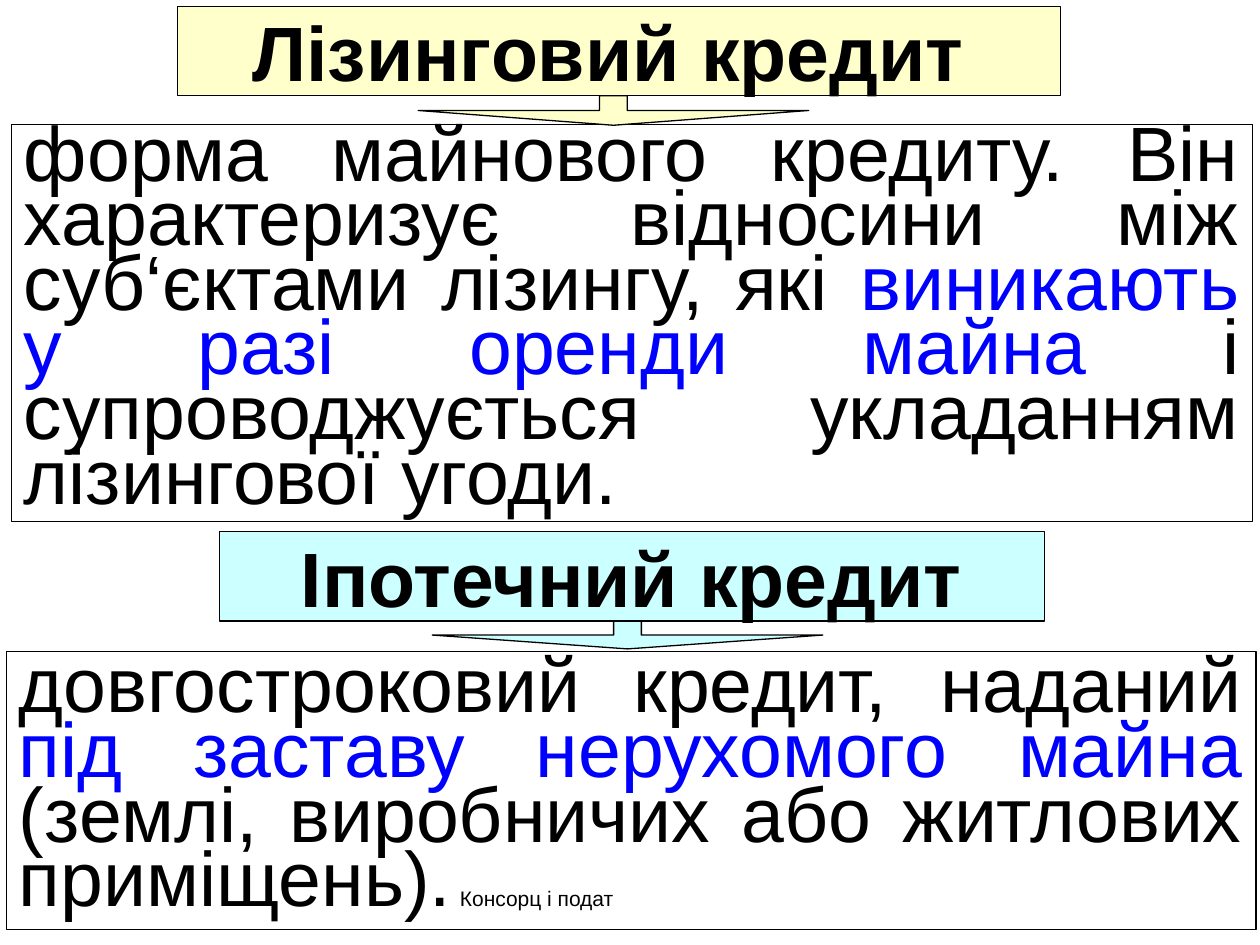
from lxml.etree import SubElement
from pptx import Presentation
from pptx.dml.color import RGBColor
from pptx.enum.shapes import MSO_SHAPE
from pptx.enum.text import MSO_ANCHOR, MSO_AUTO_SIZE, PP_ALIGN
from pptx.oxml.ns import qn
from pptx.util import Pt

BLACK = RGBColor(0x00, 0x00, 0x00)
BLUE = RGBColor(0x00, 0x00, 0xFF)
WHITE = RGBColor(0xFF, 0xFF, 0xFF)
CREAM = RGBColor(0xFF, 0xFF, 0xCC)
AQUA = RGBColor(0xCC, 0xFF, 0xFF)

LEASING_TEXT = [
    ("форма майнового кредиту. Він характеризує відносини між суб‘єктами лізингу, які ", BLACK, 44),
    ("виникають у разі оренди майна", BLUE, 44),
    (" і супроводжується укладанням лізингової угоди.", BLACK, 44),
]
MORTGAGE_TEXT = [
    ("довгостроковий кредит, наданий ", BLACK, 44),
    ("під заставу нерухомого майна", BLUE, 44),
    (" (землі, виробничих або житлових приміщень).", BLACK, 44),
    ("\tКонсорц і подат", BLACK, 12),
]


def place(shape, box, fill):
    """Move a shape to its box and give it a fill and a thin black outline."""
    shape.left, shape.top, shape.width, shape.height = map(Pt, box)
    shape.fill.solid()
    shape.fill.fore_color.rgb = fill
    shape.line.color.rgb = BLACK
    shape.line.width = Pt(0.75)


def write(shape, parts, alignment, spacing, bold=False):
    """Write coloured runs into one unbulleted paragraph and return its properties."""
    frame = shape.text_frame
    frame.auto_size = MSO_AUTO_SIZE.NONE
    frame.word_wrap = True
    frame.vertical_anchor = MSO_ANCHOR.MIDDLE
    frame.margin_left = frame.margin_right = Pt(7.2)
    frame.margin_top = frame.margin_bottom = Pt(3.6)
    paragraph = frame.paragraphs[0]
    paragraph.alignment = alignment
    paragraph.line_spacing = spacing
    paragraph.space_before = paragraph.space_after = Pt(0)
    for text, color, size in parts:
        run = paragraph.add_run()
        run.text = text
        run.font.name = "Arial"
        run.font.size = Pt(size)
        run.font.bold = bold
        run.font.color.rgb = color
    properties = paragraph._p.get_or_add_pPr()
    properties.set("marL", "0")
    properties.set("indent", "0")
    SubElement(properties, qn("a:buNone"))
    return properties


def add_heading(shape, box, text, fill):
    """Fill a heading placeholder with a centred bold term."""
    place(shape, box, fill)
    write(shape, [(text, BLACK, 44)], PP_ALIGN.CENTER, 1.0, bold=True)


def add_definition(shape, box, parts):
    """Fill a body placeholder with a justified definition and a right tab stop."""
    place(shape, box, WHITE)
    properties = write(shape, parts, PP_ALIGN.JUSTIFY, 0.7)
    if parts[-1][0].startswith("\t"):
        tabs = SubElement(properties, qn("a:tabLst"))
        SubElement(tabs, qn("a:tab"), pos=str(Pt(689)), algn="r")


def add_arrow(slide, box, fill):
    """Add the flat arrow leading from a heading to its definition."""
    arrow = slide.shapes.add_shape(MSO_SHAPE.DOWN_ARROW, *map(Pt, box))
    place(arrow, box, fill)
    arrow.shadow.inherit = False
    arrow.adjustments[0] = 0.071
    arrow.adjustments[1] = 0.5


def main():
    """Build the slide on two kinds of credit."""
    presentation = Presentation()
    presentation.slide_width, presentation.slide_height = Pt(720), Pt(540)
    slide = presentation.slides.add_slide(presentation.slide_layouts[4])
    holders = {holder.placeholder_format.idx: holder for holder in slide.placeholders}

    add_heading(holders[0], (101.5, 3.6, 504.7, 51.1), "Лізинговий кредит", CREAM)
    holders[0].text_frame.margin_right = Pt(19.4)
    add_definition(holders[2], (6.5, 71.3, 709.2, 226.8), LEASING_TEXT)
    add_arrow(slide, (239, 54.7, 223.2, 16.9), CREAM)

    add_heading(holders[3], (125.3, 303.8, 471.6, 51.1), "Іпотечний кредит", AQUA)
    add_definition(holders[4], (3.6, 372.2, 714.2, 159.1), MORTGAGE_TEXT)
    add_arrow(slide, (247, 355, 223.2, 15.8), AQUA)

    unused = holders[1].element
    unused.getparent().remove(unused)
    presentation.save("out.pptx")


if __name__ == "__main__":
    main()
